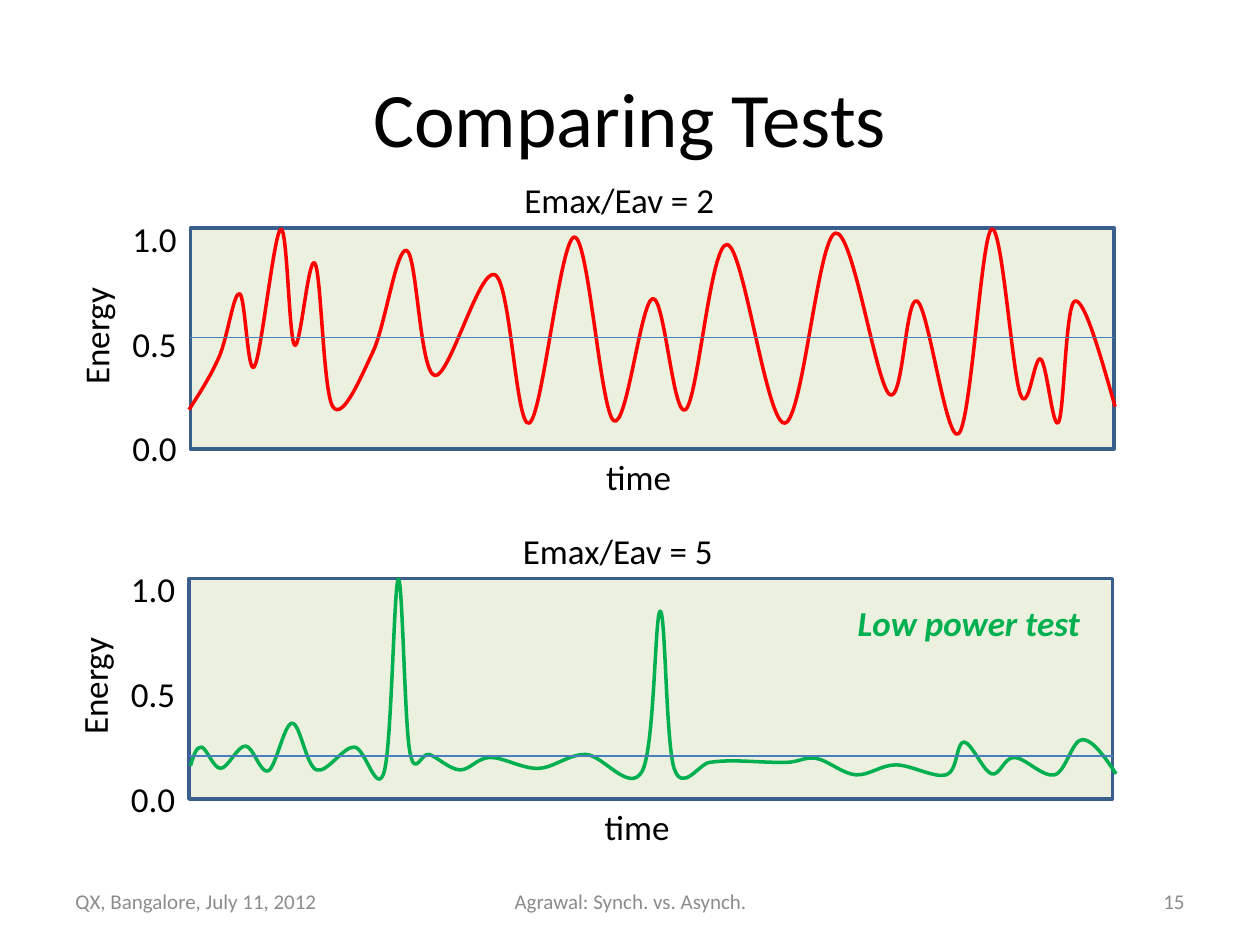
from dataclasses import dataclass

from lxml.etree import SubElement
from pptx import Presentation
from pptx.dml.color import RGBColor
from pptx.enum.shapes import MSO_CONNECTOR, MSO_SHAPE
from pptx.enum.text import MSO_ANCHOR, PP_ALIGN
from pptx.oxml.ns import qn
from pptx.util import Cm, Pt

BLACK = RGBColor(0x00, 0x00, 0x00)
GRAY = RGBColor(0x8C, 0x8C, 0x8C)
RED = RGBColor(0xFF, 0x00, 0x00)
GREEN = RGBColor(0x00, 0xB0, 0x50)
PALE_GREEN = RGBColor(0xEB, 0xF1, 0xDE)
FRAME_BLUE = RGBColor(0x3A, 0x5F, 0x8C)
AVERAGE_BLUE = RGBColor(0x4B, 0x7E, 0xBC)
FONT = "Calibri"
PLOT_WIDTH = 18.62
PLOT_HEIGHT = 4.45
LABEL_HEIGHT = 1.12

Knots = list[tuple[float, float]]


@dataclass
class EnergyPlot:
    heading: str
    left: float
    top: float
    average_offset: float
    color: RGBColor
    knots: Knots


FULL_POWER_KNOTS: Knots = [
    (3.81, 8.26), (4.42, 7.19), (4.83, 5.92), (5.13, 7.39), (5.66, 4.62), (5.94, 6.96),
    (6.35, 5.31), (6.71, 8.2), (7.52, 7.09), (8.2, 5.05), (8.76, 7.57), (9.98, 5.54),
    (10.67, 8.53), (11.58, 4.78), (12.37, 8.48), (13.16, 6.02), (13.82, 8.26),
    (14.66, 4.93), (15.82, 8.53), (16.84, 4.7), (17.93, 7.95), (18.49, 6.07),
    (19.33, 8.74), (19.99, 4.62), (20.57, 7.95), (20.98, 7.24), (21.34, 8.51),
    (21.67, 6.07), (22.48, 8.2),
]
LOW_POWER_KNOTS: Knots = [
    (3.84, 15.44), (4.06, 15.06), (4.45, 15.49), (4.95, 15.04), (5.41, 15.54),
    (5.89, 14.58), (6.38, 15.52), (7.14, 15.06), (7.75, 15.54), (8.03, 11.68),
    (8.26, 15.14), (8.66, 15.21), (9.27, 15.52), (9.88, 15.27), (10.85, 15.49),
    (11.81, 15.21), (12.95, 15.54), (13.31, 12.32), (13.59, 15.49), (14.3, 15.37),
    (14.81, 15.34), (15.85, 15.37), (16.46, 15.29), (17.25, 15.62), (18.06, 15.42),
    (19.08, 15.62), (19.43, 14.96), (19.99, 15.6), (20.45, 15.27), (21.26, 15.62),
    (21.82, 14.91), (22.5, 15.6),
]
PLOTS = [
    EnergyPlot("Emax/Eav = 2", 3.84, 4.6, 2.21, RED, FULL_POWER_KNOTS),
    EnergyPlot("Emax/Eav = 5", 3.81, 11.66, 3.58, GREEN, LOW_POWER_KNOTS),
]


def format_text(text_frame, lines: list[str], *, size=20, color=BLACK, align=PP_ALIGN.LEFT,
                bold=False, italic=False, line_spacing=None, gap=None) -> None:
    for index, line in enumerate(lines):
        paragraph = text_frame.paragraphs[0] if index == 0 else text_frame.add_paragraph()
        paragraph.alignment = align
        paragraph.line_spacing = line_spacing
        if index and gap:
            paragraph.space_before = gap
        run = paragraph.add_run()
        run.text = line
        run.font.name = FONT
        run.font.size = Pt(size)
        run.font.bold = bold
        run.font.italic = italic
        run.font.color.rgb = color


def add_text(slide, text: str, left: float, top: float, width: float,
             height: float = LABEL_HEIGHT, *, rotation=0, wrap=False,
             anchor=MSO_ANCHOR.TOP, **text_format) -> None:
    shape = slide.shapes.add_textbox(Cm(left), Cm(top), Cm(width), Cm(height))
    shape.rotation = rotation
    shape.text_frame.word_wrap = wrap
    shape.text_frame.vertical_anchor = anchor
    format_text(shape.text_frame, text.split("\n"), **text_format)


def format_line(line, color: RGBColor, width: float) -> None:
    line.color.rgb = color
    line.width = Pt(width)


def add_curve(slide, knots: Knots, color: RGBColor) -> None:
    points = [(Cm(x), Cm(y)) for x, y in knots]
    builder = slide.shapes.build_freeform(*points[0])
    builder.add_line_segments(points[1:], close=False)
    shape = builder.convert_to_shape()
    shape.shadow.inherit = False
    shape.fill.background()
    format_line(shape.line, color, 2)
    smooth_outline(shape)


def smooth_outline(shape) -> None:
    outline = shape.element.find(".//" + qn("a:path"))
    knots = [(int(point.get("x")), int(point.get("y"))) for point in outline.iter(qn("a:pt"))]
    for segment in outline.findall(qn("a:lnTo")):
        outline.remove(segment)

    def handle(index: int, direction: int) -> tuple[float, ...]:
        return tuple(knot + direction * (following - previous) / 6 for previous, knot, following
                     in zip(knots[index - 1], knots[index], knots[index + 1]))

    def middle(first, second) -> tuple[float, ...]:
        return tuple((a + b) / 2 for a, b in zip(first, second))

    last = len(knots) - 1
    for index in range(last):
        if index == 0:
            arriving = handle(1, -1)
            leaving = middle(knots[0], arriving)
        else:
            leaving = handle(index, 1)
            arriving = (middle(leaving, knots[last]) if index + 1 == last
                        else handle(index + 1, -1))
        curve = SubElement(outline, qn("a:cubicBezTo"))
        for x, y in (leaving, arriving, knots[index + 1]):
            SubElement(curve, qn("a:pt"), x=str(round(x)), y=str(round(y)))


def add_plot(slide, plot: EnergyPlot) -> None:
    left, top = plot.left, plot.top
    frame = slide.shapes.add_shape(MSO_SHAPE.RECTANGLE, Cm(left), Cm(top),
                                   Cm(PLOT_WIDTH), Cm(PLOT_HEIGHT))
    frame.shadow.inherit = False
    frame.fill.solid()
    frame.fill.fore_color.rgb = PALE_GREEN
    format_line(frame.line, FRAME_BLUE, 2)

    add_curve(slide, plot.knots, plot.color)

    average = Cm(top + plot.average_offset)
    connector = slide.shapes.add_connector(MSO_CONNECTOR.STRAIGHT, Cm(left), average,
                                           Cm(left + PLOT_WIDTH), average)
    format_line(connector.line, AVERAGE_BLUE, 0.75)
    SubElement(connector.element.spPr, qn("a:effectLst"))

    add_text(slide, "time", left + 8.13, top + PLOT_HEIGHT, 1.85)
    add_text(slide, "Energy", left - 3.15, top + 1.6, 2.49, rotation=270)
    add_text(slide, plot.heading, left + 6.48, top - LABEL_HEIGHT, 4.37)
    add_text(slide, "1.0\n0.5\n0.0", left - 1.42, top - 0.56, 1.42, 5.59,
             line_spacing=Pt(30), gap=Pt(30))


def add_footer(slide, text: str, left: float, width: float, align: PP_ALIGN) -> None:
    add_text(slide, text, left, 17.65, width, 1.02, wrap=True, anchor=MSO_ANCHOR.MIDDLE,
             size=12, color=GRAY, align=align)


def main() -> None:
    presentation = Presentation()
    presentation.slide_width = Cm(25.4)
    presentation.slide_height = Cm(19.05)
    slide = presentation.slides.add_slide(presentation.slide_layouts[5])

    title = slide.shapes.title
    title.left, title.top, title.width, title.height = Cm(1.27), Cm(0.76), Cm(22.86), Cm(3.18)
    title.text_frame.vertical_anchor = MSO_ANCHOR.MIDDLE
    format_text(title.text_frame, ["Comparing Tests"], size=44, align=PP_ALIGN.CENTER)

    for plot in PLOTS:
        add_plot(slide, plot)
    add_text(slide, "Low power test", 17.04, 12.01, 5.03, color=GREEN, bold=True, italic=True)

    add_footer(slide, "QX, Bangalore, July 11, 2012", 1.27, 5.92, PP_ALIGN.LEFT)
    add_footer(slide, "Agrawal: Synch. vs. Asynch.", 8.69, 8.05, PP_ALIGN.CENTER)
    add_footer(slide, "15", 18.21, 5.92, PP_ALIGN.RIGHT)

    presentation.save("out.pptx")


if __name__ == "__main__":
    main()
